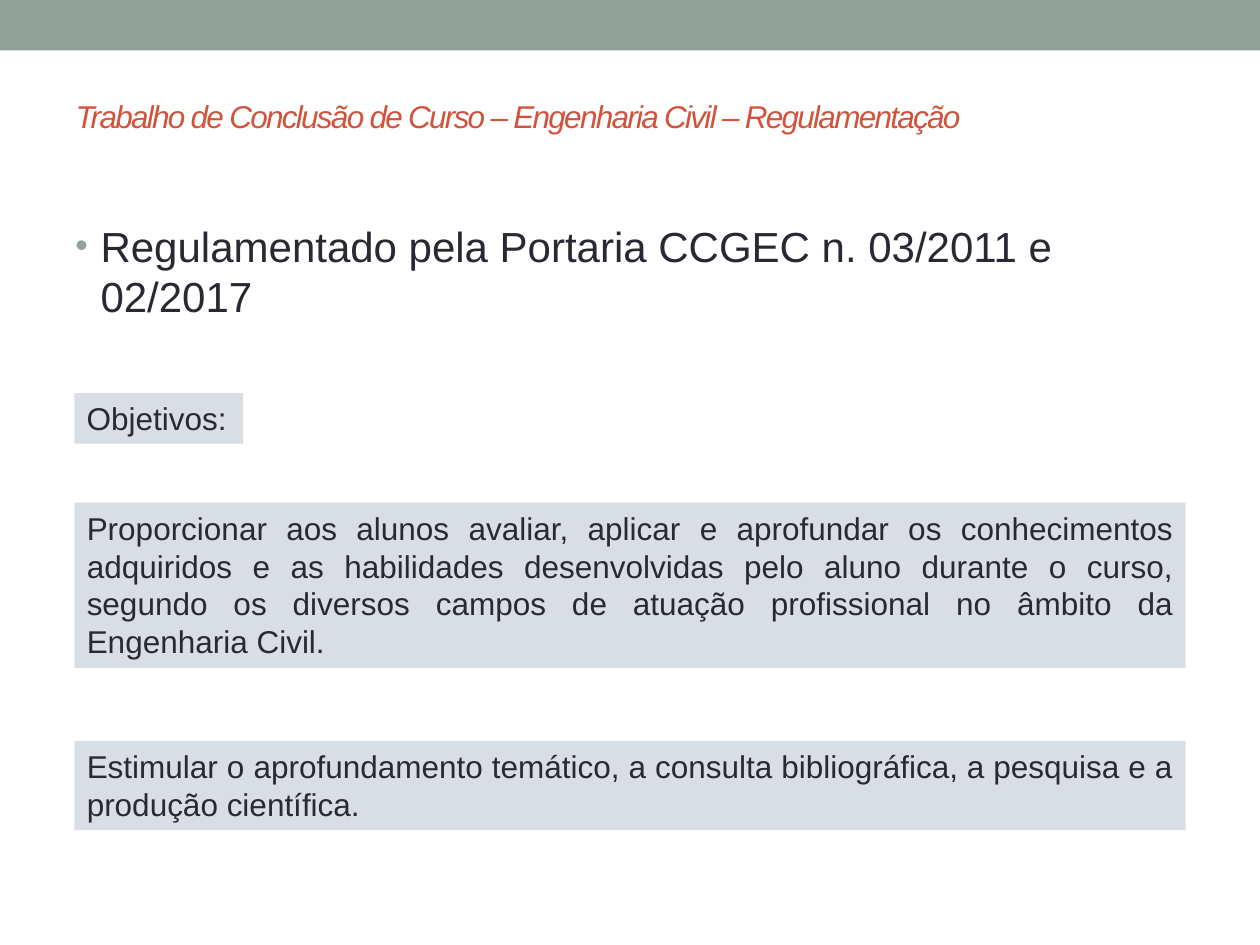
from dataclasses import dataclass

from lxml import etree
from pptx import Presentation
from pptx.dml.color import RGBColor
from pptx.enum import shapes, text
from pptx.oxml import ns
from pptx.util import Pt

# Content
TITLE = "Trabalho de Conclusão de Curso – Engenharia Civil – Regulamentação"
REGULATION = "Regulamentado pela Portaria CCGEC n. 03/2011 e 02/2017"
# Panels: text, top, width, height, alignment
LEFT, JUSTIFY = text.PP_ALIGN.LEFT, text.PP_ALIGN.JUSTIFY
PANELS = [
    ("Objetivos:", 224.6, 96.5, 29, LEFT),
    ("Proporcionar aos alunos avaliar, aplicar e aprofundar os conhecimentos "
     "adquiridos e as habilidades desenvolvidas pelo aluno durante o curso, "
     "segundo os diversos campos de atuação profissional no âmbito da "
     "Engenharia Civil.", 287.2, 635, 94.5, JUSTIFY),
    ("Estimular o aprofundamento temático, a consulta bibliográfica, "
     "a pesquisa e a produção científica.", 423.4, 635, 51, JUSTIFY),
]
PANEL_LEFT = 42.5


@dataclass(frozen=True)
class Theme:
    font: str = "Arial"
    band: str = "93A299"
    panel: str = "D9DEE4"
    ink: str = "292934"
    accent: str = "D2533C"
    body_size: int = 24
    text_size: int = 18


THEME = Theme()


def add_box(slide, left, top, width, height, color):
    shape = slide.shapes.add_shape(shapes.MSO_SHAPE.RECTANGLE,
                                   Pt(left), Pt(top), Pt(width), Pt(height))
    shape.shadow.inherit = False
    shape.fill.solid()
    shape.fill.fore_color.rgb = RGBColor.from_string(color)
    shape.line.fill.background()
    return shape


def write(shape, words, size, color, align=LEFT, anchor=text.MSO_ANCHOR.TOP):
    frame = shape.text_frame
    frame.word_wrap = True
    frame.auto_size = text.MSO_AUTO_SIZE.NONE
    frame.vertical_anchor = anchor
    paragraph = frame.paragraphs[0]
    paragraph.text = words
    paragraph.alignment = align
    paragraph.font.name = THEME.font
    paragraph.font.size = Pt(size)
    paragraph.font.color.rgb = RGBColor.from_string(color)
    return paragraph


def add_bullet(paragraph, indent, color):
    properties = paragraph._p.get_or_add_pPr()
    properties.set("marL", str(Pt(indent)))
    properties.set("indent", str(-Pt(indent)))
    bullet_color = etree.SubElement(properties, ns.qn("a:buClr"))
    etree.SubElement(bullet_color, ns.qn("a:srgbClr"), val=color)
    etree.SubElement(properties, ns.qn("a:buSzPct"), val="85000")
    etree.SubElement(properties, ns.qn("a:buFont"), typeface=THEME.font)
    etree.SubElement(properties, ns.qn("a:buChar"), char="•")


presentation = Presentation()
presentation.slide_width, presentation.slide_height = Pt(720), Pt(540)
slide = presentation.slides.add_slide(presentation.slide_layouts[5])

# Top band
add_box(slide, 0, 0, 720, 28.8, THEME.band)

# Title
title = slide.shapes.title
title.left, title.top, title.width, title.height = Pt(36), Pt(49), Pt(596), Pt(34)
heading = write(title, TITLE, THEME.text_size, THEME.accent,
                anchor=text.MSO_ANCHOR.MIDDLE)
heading.font.italic = True
heading._p.pPr.find(ns.qn("a:defRPr")).set("spc", "-100")

# Regulation bullet
body = slide.shapes.add_textbox(Pt(36), Pt(122.4), Pt(648), Pt(76.3))
add_bullet(body.text_frame.paragraphs[0], 14.4, THEME.band)
write(body, REGULATION, THEME.body_size, THEME.ink)

# Objective panels
for words, top, width, height, align in PANELS:
    panel = add_box(slide, PANEL_LEFT, top, width, height, THEME.panel)
    write(panel, words, THEME.text_size, THEME.ink, align)

presentation.save("out.pptx")
